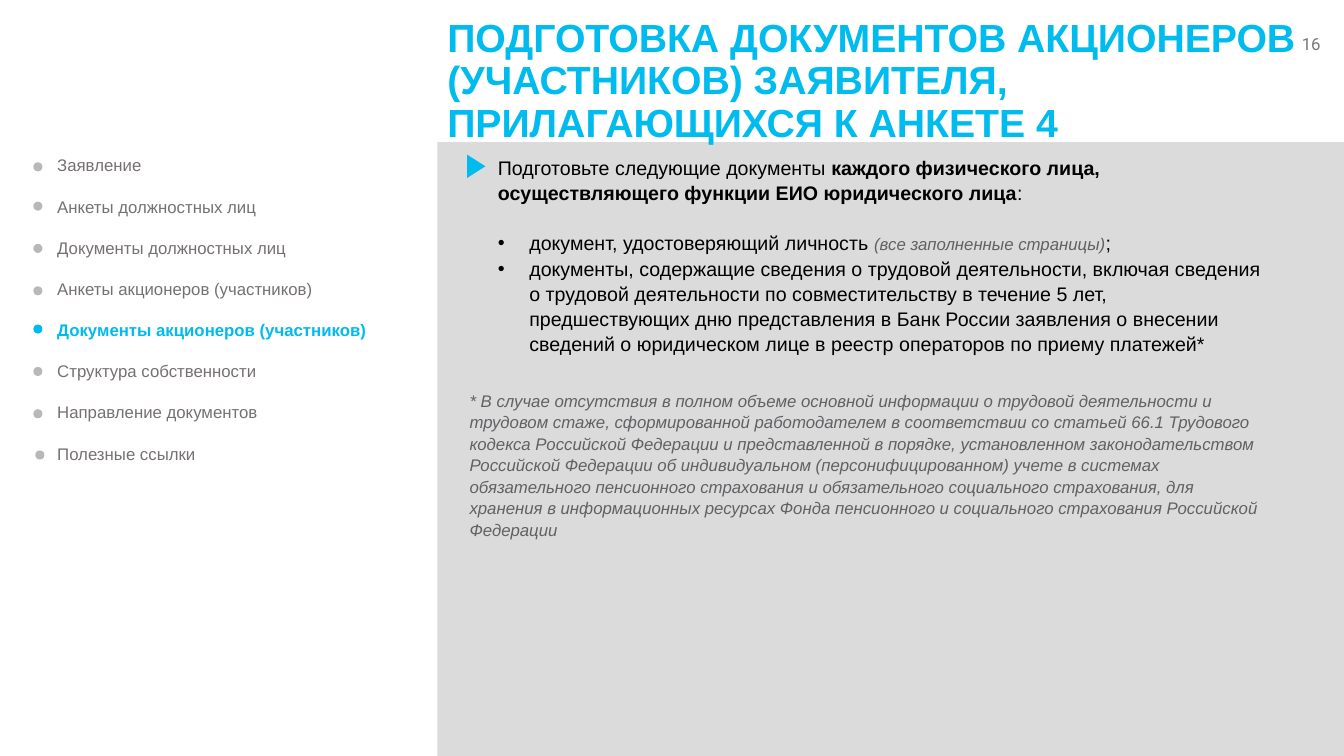
"""Build the slide on documents of shareholders attached to form 4."""
from typing import NamedTuple

from lxml import etree
from pptx import Presentation, util as u
from pptx.dml.color import RGBColor
from pptx.enum import shapes, text
from pptx.oxml.ns import qn

COLORS = {
    "accent": "00BBEE", "panel": "DBDBDC", "dot": "B7B8B9", "black": "000000",
    "note": "616164", "menu": "767171", "number": "74777B",
}
PANEL_LEFT = 312.5


class Span(NamedTuple):
    words: str
    size: float = 14
    color: str = "black"
    bold: bool = False
    italic: bool = False
    font: str = "Arial"


class MenuItem(NamedTuple):
    label: str
    dot_top: float
    dot_left: float = 23.8
    active: bool = False


MENU = [
    MenuItem("Заявление", 115.9),
    MenuItem("Анкеты должностных лиц", 144),
    MenuItem("Документы должностных лиц", 174.2),
    MenuItem("Анкеты акционеров (участников)", 204.5),
    MenuItem("Документы акционеров (участников)", 231.8, active=True),
    MenuItem("Структура собственности", 262.1),
    MenuItem("Направление документов", 292.3),
    MenuItem("Полезные ссылки", 321.8, dot_left=25.2),
]
INTRO = [
    Span("Подготовьте следующие документы "),
    Span("каждого физического лица, осуществляющего функции ЕИО юридического лица", bold=True),
    Span(":"),
]
IDENTITY = [
    Span("документ, удостоверяющий личность "),
    Span("(все заполненные страницы)", 12, "note", italic=True),
    Span(";"),
]
CAREER = [Span(
    "документы, содержащие сведения о трудовой деятельности, включая сведения "
    "о трудовой деятельности по совместительству в течение 5 лет, предшествующих дню "
    "представления в Банк России заявления о внесении сведений о юридическом лице "
    "в реестр операторов по приему платежей*"
)]
FOOTNOTE = [Span(
    "* В случае отсутствия в полном объеме основной информации о трудовой деятельности "
    "и трудовом стаже, сформированной работодателем в соответствии со статьей 66.1 "
    "Трудового кодекса Российской Федерации и представленной в порядке, установленном "
    "законодательством Российской Федерации об индивидуальном (персонифицированном) учете "
    "в системах обязательного пенсионного страхования и обязательного социального "
    "страхования, для хранения в информационных ресурсах Фонда пенсионного и социального "
    "страхования Российской Федерации", 12, "note", italic=True
)]
TITLE = [Span(
    "ПОДГОТОВКА ДОКУМЕНТОВ АКЦИОНЕРОВ (УЧАСТНИКОВ) ЗАЯВИТЕЛЯ, ПРИЛАГАЮЩИХСЯ К АНКЕТЕ 4",
    28, "accent", bold=True
)]


def add_figure(page, kind, left: float, top: float, width: float, height: float, color: str):
    figure = page.shapes.add_shape(kind, u.Pt(left), u.Pt(top), u.Pt(width), u.Pt(height))
    figure.shadow.inherit = False
    figure.fill.solid()
    figure.fill.fore_color.rgb = RGBColor.from_string(COLORS[color])
    figure.line.fill.background()
    return figure


def add_box(page, left: float, top: float, width: float, height: float):
    box = page.shapes.add_textbox(u.Pt(left), u.Pt(top), u.Pt(width), u.Pt(height))
    box.text_frame.word_wrap = True
    return box.text_frame


def add_para(frame, spans: list[Span], *, line: float = 1, before: float = 0, after: float = 0,
             indent: float = 0, hanging: float = 0, bullet: str = "", align=text.PP_ALIGN.LEFT):
    first = frame.paragraphs[0]
    para = frame.add_paragraph() if first.runs else first
    para.alignment = align
    para.line_spacing = line
    para.space_before, para.space_after = u.Pt(before), u.Pt(after)
    settings = para._p.get_or_add_pPr()
    settings.set("marL", str(u.Pt(indent)))
    settings.set("indent", str(u.Pt(-hanging)))
    if bullet:
        etree.SubElement(settings, qn("a:buFont"), typeface="Arial")
        etree.SubElement(settings, qn("a:buChar"), char=bullet)
    for span in spans:
        run = para.add_run()
        run.text = span.words
        run.font.name, run.font.size = span.font, u.Pt(span.size)
        run.font.bold, run.font.italic = span.bold, span.italic
        run.font.color.rgb = RGBColor.from_string(COLORS[span.color])


def add_menu(page) -> None:
    frame = add_box(page, 33.8, 107.3, 265.7, 229.7)
    for item in MENU:
        color = "accent" if item.active else "menu"
        add_para(frame, [Span(item.label, 12, color, item.active)], after=15)
        add_figure(page, shapes.MSO_SHAPE.OVAL, item.dot_left, item.dot_top, 6.5, 6.5,
                   "accent" if item.active else "dot")


def add_content(page) -> None:
    add_figure(page, shapes.MSO_SHAPE.RECTANGLE, PANEL_LEFT, 101.5, 647.5, 438.5, "panel")
    frame = add_box(page, PANEL_LEFT, 106.6, 596.2, 152.6)
    add_para(frame, INTRO, line=1.07, indent=36)
    add_para(frame, IDENTITY, line=1.07, before=18, indent=58.5, hanging=22.5, bullet="•")
    add_para(frame, CAREER, line=1.07, indent=58.5, hanging=22.5, bullet="•")
    marker = add_figure(page, shapes.MSO_SHAPE.ISOSCELES_TRIANGLE, 331.9, 112.3, 16.6, 13, "accent")
    marker.rotation = 90
    add_para(add_box(page, 292.3, 274.3, 616.3, 115.9), FOOTNOTE, line=1.07, indent=36)


def main() -> None:
    deck = Presentation()
    deck.slide_width, deck.slide_height = u.Pt(960), u.Pt(540)
    page = deck.slides.add_slide(deck.slide_layouts[6])
    add_para(add_box(page, 776.2, 20.2, 174.2, 21.6), [Span("16", 12, "number", font="Roboto")],
             align=text.PP_ALIGN.RIGHT)
    add_content(page)
    add_menu(page)
    title = add_box(page, PANEL_LEFT, 6.5, 647.5, 104.4)
    title.vertical_anchor = text.MSO_ANCHOR.MIDDLE
    add_para(title, TITLE, line=0.9)
    deck.save("out.pptx")


if __name__ == "__main__":
    main()
